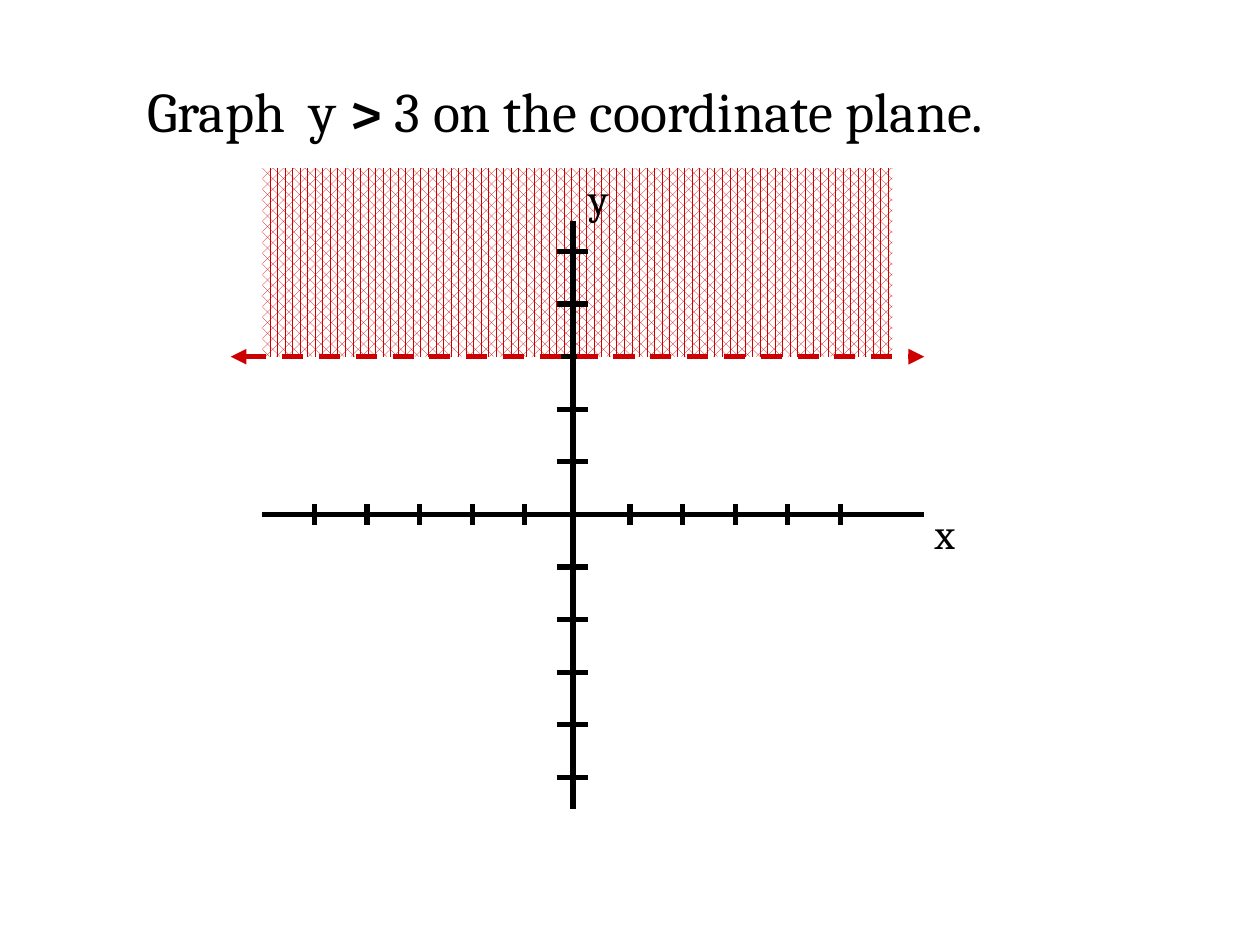
"""Build a slide that graphs y > 3 on a coordinate plane."""
import dataclasses

import lxml.etree
import pptx
import pptx.dml.color
import pptx.enum.dml
import pptx.enum.shapes
import pptx.enum.text
import pptx.oxml.ns
import pptx.util

Cm = pptx.util.Cm
Pt = pptx.util.Pt
RGB = pptx.dml.color.RGBColor


@dataclasses.dataclass(frozen=True)
class Theme:
    """Hold the colours, font and sizes of the slide."""
    ink: RGB = RGB(0, 0, 0)
    red: RGB = RGB(0xCC, 0, 0)
    paper: RGB = RGB(255, 255, 255)
    font: str = "Cambria"
    title: Pt = Pt(32)
    label: Pt = Pt(24)
    line: Pt = Pt(3)


THEME = Theme()
MID_X, MID_Y = 11.64, 10.37
AXIS_X = 11.55
STEP = 1.06
TICKS = [n for n in range(-5, 6) if n]


def apply(item, form):
    """Set each attribute named in the format dict."""
    for name, value in form.items():
        setattr(item, name, value)


def add_tag(node, name, **form):
    """Append one drawing element to an XML node."""
    lxml.etree.SubElement(node, pptx.oxml.ns.qn(name), form)


def add_line(slide, start, end, color=THEME.ink, ends=(), **form):
    """Draw a line with optional arrowheads."""
    kind = pptx.enum.shapes.MSO_CONNECTOR.STRAIGHT
    line = slide.shapes.add_connector(kind, *map(Cm, start + end))
    line.line.color.rgb = color
    apply(line.line, {"width": THEME.line, **form})
    for name in ends:
        add_tag(line.line._get_or_add_ln(), name, type="triangle")
    add_tag(line._element.spPr, "a:effectLst")


def add_text(slide, box, size, *parts):
    """Write one line of text from (words, bold) parts."""
    frame = slide.shapes.add_textbox(*map(Cm, box)).text_frame
    fit = pptx.enum.text.MSO_AUTO_SIZE.SHAPE_TO_FIT_TEXT
    apply(frame, {"word_wrap": False, "auto_size": fit})
    for words, bold in parts:
        run = frame.paragraphs[0].add_run()
        run.text = words
        apply(run.font, {"name": THEME.font, "size": size, "bold": bold})
        run.font.color.rgb = THEME.ink


def add_shade(slide, box):
    """Shade the region above the boundary."""
    kind = pptx.enum.shapes.MSO_SHAPE.RECTANGLE
    shade = slide.shapes.add_shape(kind, *map(Cm, box))
    shade.shadow.inherit = False
    shade.line.fill.background()
    shade.fill.patterned()
    shade.fill.pattern = pptx.enum.dml.MSO_PATTERN.PERCENT_60
    shade.fill.fore_color.rgb = THEME.red
    shade.fill.back_color.rgb = THEME.paper


def add_axes(slide):
    """Draw both axes with their ticks."""
    add_line(slide, (AXIS_X, 4.45), (AXIS_X, 16.3))
    add_line(slide, (5.29, MID_Y), (18.63, MID_Y))
    for n in TICKS:
        x, y = MID_X + n * STEP, MID_Y - n * STEP
        add_line(slide, (x, MID_Y - 0.21), (x, MID_Y + 0.21))
        add_line(slide, (11.22, y), (11.86, y))


def main():
    """Build and save the slide."""
    deck = pptx.Presentation()
    apply(deck, {"slide_width": Cm(25.4), "slide_height": Cm(19.05)})
    slide = deck.slides.add_slide(deck.slide_layouts[6])
    edge = MID_Y - 3 * STEP
    add_shade(slide, (5.29, 3.39, 12.7, edge - 3.39))
    add_text(slide, (2.72, 1.42, 17.37, 1.6), THEME.title,
             ("Graph  y ", False), (">", True),
             (" 3 on the coordinate plane.", False))
    add_axes(slide)
    add_line(slide, (4.65, edge), (18.63, edge), THEME.red,
             ("a:headEnd", "a:tailEnd"),
             dash_style=pptx.enum.dml.MSO_LINE.DASH)
    for name, x, y in (("x", 18.59, 10.11), ("y", 11.61, 3.35)):
        add_text(slide, (x, y, 0.94, 1.27), THEME.label, (name, False))
    deck.save("out.pptx")


if __name__ == "__main__":
    main()
